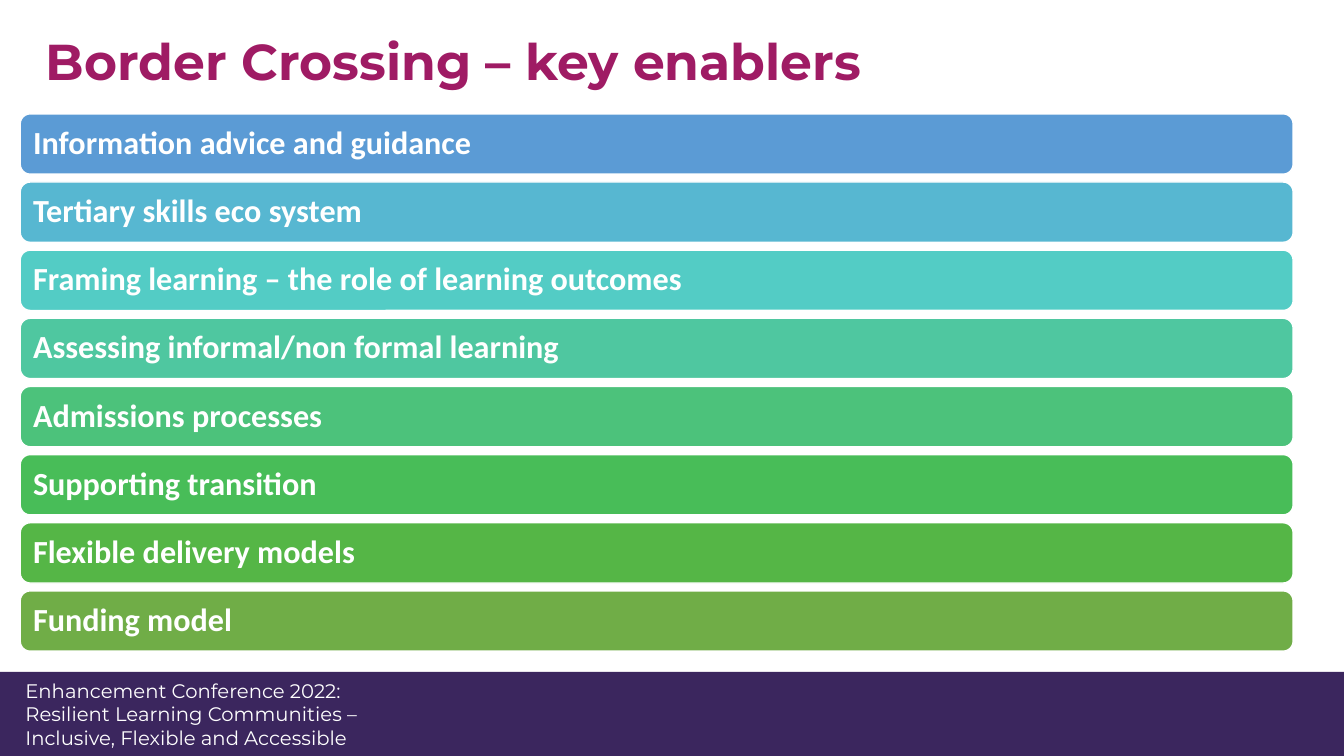
from dataclasses import dataclass

from pptx import Presentation
from pptx import util as u
from pptx.dml.color import RGBColor
from pptx.enum import shapes, text

WHITE = RGBColor(0xFF, 0xFF, 0xFF)
PURPLE = RGBColor(0x3B, 0x26, 0x5E)
MAGENTA = RGBColor(0x9F, 0x1B, 0x64)

SLIDE_WIDTH, SLIDE_HEIGHT = u.Cm(33.87), u.Cm(19.05)
BAR_LEFT, BAR_WIDTH, BAR_HEIGHT = u.Cm(0.51), u.Cm(32.08), u.Cm(1.52)
FIRST_TOP, LAST_TOP = u.Cm(2.87), u.Cm(14.89)
FOOTER_TOP = u.Cm(16.93)

TITLE_FONT = {"name": "Montserrat", "size": u.Pt(36), "bold": True}
BAR_FONT = {"name": "Calibri", "size": u.Pt(23), "bold": True}
FOOTER_FONT = {"name": "Montserrat", "size": u.Pt(14), "bold": False}


@dataclass
class Enabler:
    label: str
    color: RGBColor


ENABLERS = [
    Enabler("Information advice and guidance", RGBColor(0x5B, 0x9B, 0xD5)),
    Enabler("Tertiary skills eco system", RGBColor(0x57, 0xB7, 0xD1)),
    Enabler("Framing learning – the role of learning outcomes", RGBColor(0x53, 0xCC, 0xC5)),
    Enabler("Assessing informal/non formal learning", RGBColor(0x4F, 0xC7, 0xA0)),
    Enabler("Admissions processes", RGBColor(0x4C, 0xC2, 0x7B)),
    Enabler("Supporting transition", RGBColor(0x48, 0xBD, 0x58)),
    Enabler("Flexible delivery models", RGBColor(0x55, 0xB6, 0x46)),
    Enabler("Funding model", RGBColor(0x70, 0xAD, 0x47)),
]

FOOTER_LINES = [
    "Enhancement Conference 2022:",
    "Resilient Learning Communities –",
    "Inclusive, Flexible and Accessible",
]


def write(box, lines: list[str], font: dict, color: RGBColor,
          spacing: float = 1.0, inset: u.Length = u.Cm(0.25),
          anchor=text.MSO_ANCHOR.MIDDLE) -> None:
    """Fill a box with left-aligned paragraphs in one format."""
    frame = box.text_frame
    frame.word_wrap = True
    frame.vertical_anchor = anchor
    frame.margin_left = inset
    for index, line in enumerate(lines):
        para = frame.add_paragraph() if index else frame.paragraphs[0]
        para.alignment = text.PP_ALIGN.LEFT
        para.line_spacing = spacing
        span = para.add_run()
        span.text = line
        for name, value in font.items():
            setattr(span.font, name, value)
        span.font.color.rgb = color


def add_block(page, kind, left: int, top: int, width: int, height: int, fill: RGBColor):
    """Add a solid shape without outline or shadow."""
    block = page.shapes.add_shape(kind, left, top, width, height)
    block.shadow.inherit = False
    block.fill.solid()
    block.fill.fore_color.rgb = fill
    block.line.fill.background()
    return block


def main() -> None:
    deck = Presentation()
    deck.slide_width, deck.slide_height = SLIDE_WIDTH, SLIDE_HEIGHT
    page = deck.slides.add_slide(deck.slide_layouts[6])

    # Footer band
    footer = add_block(page, shapes.MSO_SHAPE.RECTANGLE, 0, FOOTER_TOP,
                       SLIDE_WIDTH, SLIDE_HEIGHT - FOOTER_TOP, PURPLE)
    write(footer, FOOTER_LINES, FOOTER_FONT, WHITE, inset=u.Cm(0.64))

    # Title
    title = page.shapes.add_textbox(u.Cm(0.91), u.Cm(0.81), u.Cm(31.32), u.Cm(3.05))
    write(title, ["Border Crossing – key enablers"], TITLE_FONT, MAGENTA,
          spacing=0.9, anchor=text.MSO_ANCHOR.TOP)

    # Enabler bars, evenly spaced
    step = (LAST_TOP - FIRST_TOP) / (len(ENABLERS) - 1)
    for row, enabler in enumerate(ENABLERS):
        bar = add_block(page, shapes.MSO_SHAPE.ROUNDED_RECTANGLE, BAR_LEFT,
                        round(FIRST_TOP + row * step), BAR_WIDTH, BAR_HEIGHT, enabler.color)
        bar.line.color.rgb = WHITE
        bar.line.width = u.Pt(1)
        write(bar, [enabler.label], BAR_FONT, WHITE, spacing=0.9)

    deck.save("out.pptx")


if __name__ == "__main__":
    main()
